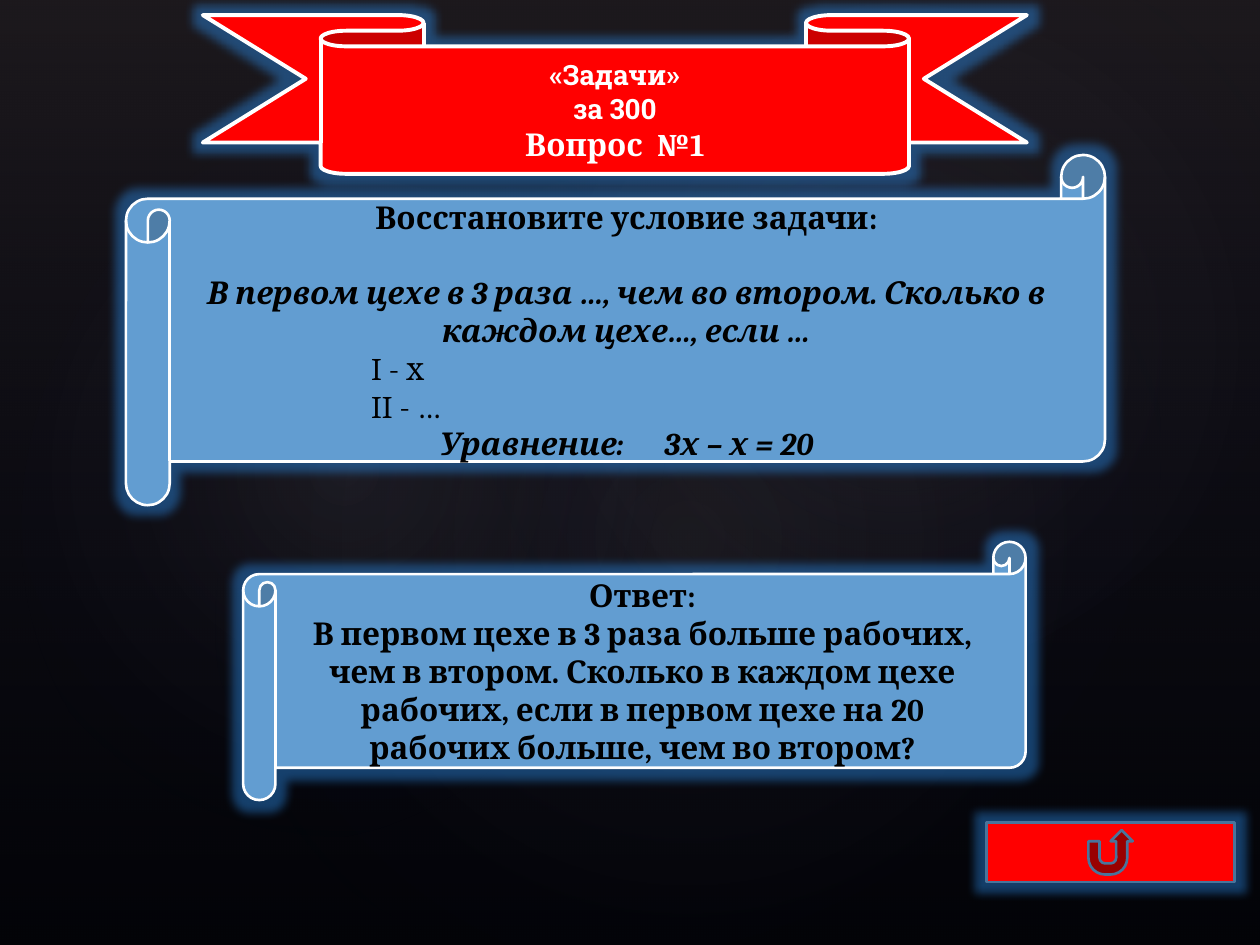
from lxml.etree import SubElement
from pptx import Presentation
from pptx.dml.color import RGBColor as RGB
from pptx.enum.shapes import MSO_SHAPE as SHAPE
from pptx.enum.text import MSO_ANCHOR as ANCHOR, MSO_AUTO_SIZE as AUTOSIZE, PP_ALIGN as ALIGN
from pptx.oxml import parse_xml
from pptx.oxml.ns import nsdecls, qn
from pptx.util import Inches, Pt

COLORS = {
    "black": "000000", "white": "FFFFFF", "red": "FF0000", "scroll": "629DD1",
    "button line": "49749B", "glow": "2E97FC",
    "dusk": "504652", "navy": "242852", "haze": "C4BCC6",
}
COLUMNS, ROWS = 100, 75  # slide grid
GAP = " "


def color(name):
    return RGB.from_string(COLORS[name])


class QuizSlide:
    heading_font, text_font = "Roboto Slab", "Cambria"

    def __init__(self, deck):
        self.deck = deck
        self.page = deck.slides.add_slide(deck.slide_layouts[5])
        background = self.page.background.fill
        background.solid()
        background.fore_color.rgb = color("black")

    def area(self, left, top, width, height):
        """Turn columns and rows into slide lengths."""
        column = self.deck.slide_width / COLUMNS
        row = self.deck.slide_height / ROWS
        return [round(n) for n in (left * column, top * row, width * column, height * row)]

    def add(self, kind, at):
        shape = self.page.shapes.add_shape(kind, *self.area(*at))
        shape.shadow.inherit = False
        return shape

    def light(self, kind, at, stops, direction, rotation=0):
        """Translucent gradient layer; stops are (position, color, opacity)."""
        shape = self.add(kind, at)
        shape.rotation = rotation
        shape.line.fill.background()
        marks = "".join(
            f'<a:gs pos="{pos * 1000}"><a:srgbClr val="{COLORS[name]}">'
            f'<a:alpha val="{opacity * 1000}"/></a:srgbClr></a:gs>'
            for pos, name, opacity in stops)
        gradient = parse_xml(f'<a:gradFill {nsdecls("a")} rotWithShape="1">'
                             f'<a:gsLst>{marks}</a:gsLst>{direction}</a:gradFill>')
        shape.element.spPr.find(qn("a:prstGeom")).addnext(gradient)

    def glowing(self, kind, at, fill, line, width):
        shape = self.add(kind, at)
        shape.fill.solid()
        shape.fill.fore_color.rgb = color(fill)
        shape.line.color.rgb = color(line)
        shape.line.width = Pt(width)
        effects = shape.element.spPr.find(qn("a:effectLst"))
        glow = SubElement(effects, qn("a:glow"), rad=str(Pt(11)))
        tint = SubElement(glow, qn("a:srgbClr"), val=COLORS["glow"])
        SubElement(tint, qn("a:alpha"), val="40000")
        return shape

    def frame(self, shape):
        frame = shape.text_frame
        frame.word_wrap = True
        frame.auto_size = AUTOSIZE.NONE
        frame.vertical_anchor = ANCHOR.MIDDLE
        return frame

    def add_line(self, frame, first, text, ink, size=18, font=None, bold=True,
                 italic=False, indent=0, after=0, gap=0):
        """Add a paragraph; a tuple of texts is joined by one space widened by gap points."""
        para = frame.paragraphs[0] if first else frame.add_paragraph()
        para.alignment = ALIGN.LEFT if indent else ALIGN.CENTER
        para.space_after = Pt(after)
        para.font.name = font or self.text_font
        para.font.size = Pt(size)
        para.font.bold, para.font.italic = bold, italic
        para.font.color.rgb = color(ink)
        if indent:
            para.level = 3
            para._p.get_or_add_pPr().set("marL", str(Inches(indent)))
            para._p.get_or_add_pPr().set("indent", "0")
        parts = text if isinstance(text, tuple) else (text,)
        for index, part in enumerate(parts):
            if index:
                space = para.add_run()
                space.text = GAP
                space.font._element.set("spc", str(round(gap * 100)))
            para.add_run().text = part

    def title(self, at, lines):
        title = self.page.shapes.title
        title.left, title.top, title.width, title.height = self.area(*at)
        title.element.getparent().append(title.element)  # bring to front
        frame = self.frame(title)
        for index, (text, style) in enumerate(lines):
            self.add_line(frame, index == 0, text, "white", **style)

    def scroll(self, at, lines):
        shape = self.glowing(SHAPE.HORIZONTAL_SCROLL, at, "scroll", "white", 1.5)
        frame = self.frame(shape)
        for index, (text, style) in enumerate(lines):
            self.add_line(frame, index == 0, text, "black", **style)


def main():
    deck = Presentation()
    deck.slide_width, deck.slide_height = Inches(10), Inches(7.5)
    slide = QuizSlide(deck)

    # Backdrop: a dark wash and three soft lights
    slide.light(SHAPE.RECTANGLE, (0, 0, COLUMNS, ROWS),
                [(0, "dusk", 36), (100, "navy", 10)], '<a:lin ang="5400000" scaled="0"/>')
    radial = ('<a:path path="circle"><a:fillToRect l="50000" t="50000" '
              'r="50000" b="50000"/></a:path>')
    for at, rotation, opacity in [((15, 11.4, 79.2, 62.4), 328.7, 7),
                                  ((-3, 12.8, 60.6, 49), 294.3, 8),
                                  ((35.8, 1.3, 70.9, 52), 328.7, 8)]:
        slide.light(SHAPE.OVAL, at, [(0, "haze", opacity), (58, "navy", 0)], radial, rotation)

    # Heading ribbon
    ribbon = slide.glowing(SHAPE.DOWN_RIBBON, (16.1, 1.2, 65.4, 12.6), "red", "white", 2.25)
    ribbon.adjustments[0], ribbon.adjustments[1] = 0.197, 0.714

    # Return button
    slide.glowing(SHAPE.ACTION_BUTTON_RETURN, (78.3, 65.3, 19.7, 4.7), "red", "button line", 1.5)

    # Question
    slide.scroll((10, 12.3, 77.7, 27.8), [
        ("Восстановите условие задачи:", {"after": 21.5}),
        ("В первом цехе в 3 раза …, чем во втором. Сколько в каждом цехе…, если …",
         {"italic": True}),
        ("I - х", {"bold": False, "indent": 1.5}),
        ("II - …", {"bold": False, "indent": 1.5}),
        (("Уравнение:", "3х – х = 20"), {"italic": True, "gap": 19.5}),
    ])

    # Answer
    slide.scroll((19.3, 43, 62.1, 20.5), [
        ("Ответ:", {}),
        ("В первом цехе в 3 раза больше рабочих, чем в втором. Сколько в каждом цехе "
         "рабочих, если в первом цехе на 20 рабочих больше, чем во втором?", {}),
    ])

    # Heading text
    heading = {"size": 16, "font": slide.heading_font}
    slide.title((25.4, 3.7, 46.8, 10.1), [
        ("«Задачи»", heading),
        ("за 300", heading),
        (("Вопрос", "№1"), {"gap": 4}),
    ])

    deck.save("out.pptx")


if __name__ == "__main__":
    main()
